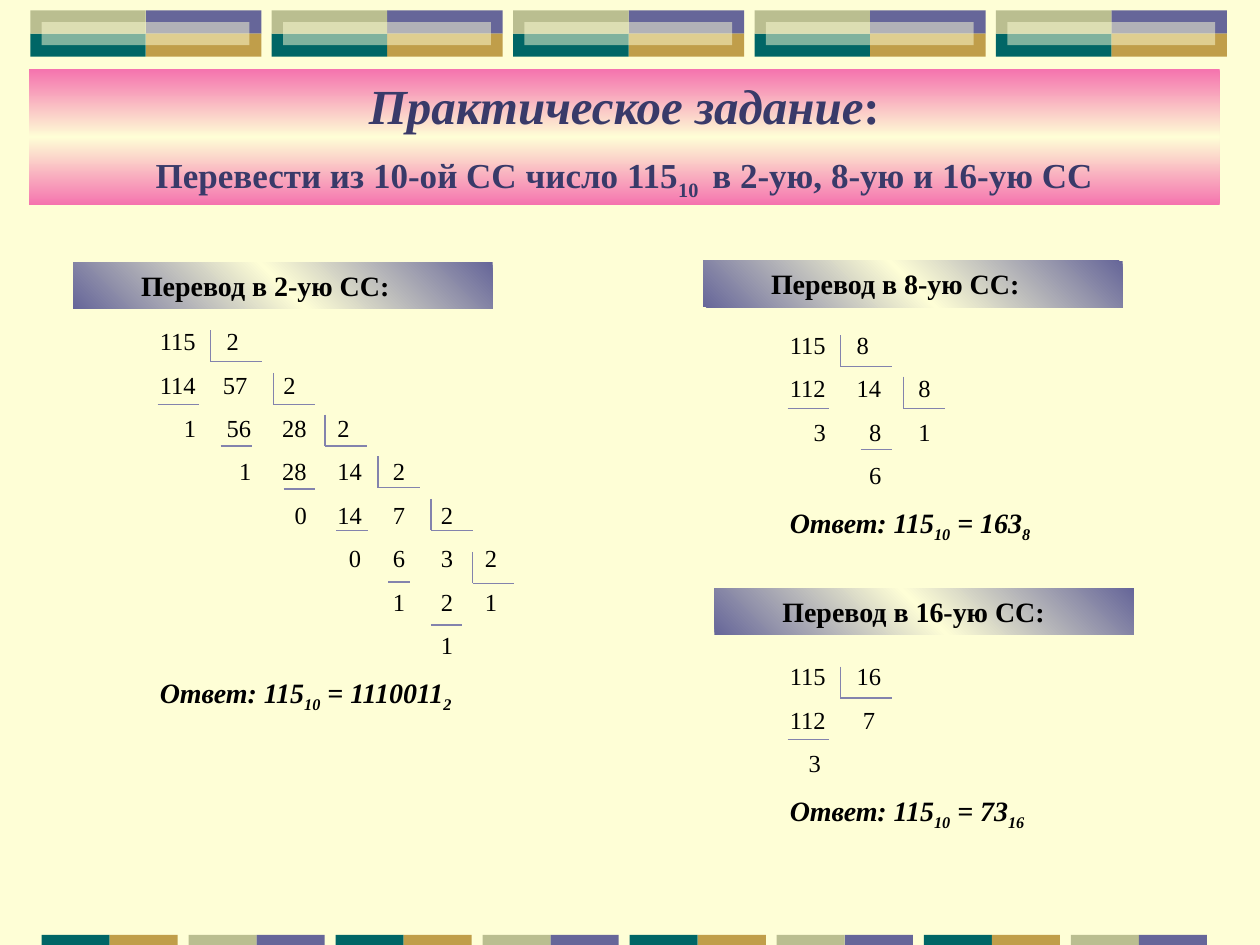
import pptx
import pptx.dml.color
import pptx.enum.shapes
import pptx.enum.text
import pptx.oxml.ns
import pptx.util
from lxml import etree

Inches, Pt = pptx.util.Inches, pptx.util.Pt
RGBColor = pptx.dml.color.RGBColor
ALIGN = pptx.enum.text.PP_ALIGN
ANCHOR = pptx.enum.text.MSO_ANCHOR
qn = pptx.oxml.ns.qn

CREAM = RGBColor(0xFE, 0xFE, 0xD6)
VIOLET = RGBColor(0x66, 0x66, 0x99)
GOLD = RGBColor(0xC0, 0x9E, 0x4A)
TEAL = RGBColor(0x00, 0x66, 0x66)
OLIVE = RGBColor(0xBA, 0xBE, 0x90)
PINK = RGBColor(0xF5, 0x73, 0xAE)
NAVY = RGBColor(0x39, 0x3A, 0x69)
LILAC = RGBColor(0x83, 0x83, 0xAD)
BLACK = RGBColor(0, 0, 0)
FONT = "Times New Roman"

# Content: text between underscores is a subscript
TITLE = "Практическое задание"
TASK = "Перевести из 10-ой СС число 115_10 _ в 2-ую, 8-ую и 16-ую СС"

# Rows hold (x, number); corners and bars hold (x, y, width);
# all are measured from the working area, whose place is "work"
CONVERSIONS = [
    dict(heading="Перевод в 2-ую СС:", heading_at=(0.58, 2.08),
         work=(1.17, 2.54, 4.42, 3.22),
         rows=[[(0, "115"), (0.53, "2")],
               [(0, "114"), (0.5, "57"), (0.98, "2")],
               [(0.19, "1"), (0.53, "56"), (0.97, "28"), (1.41, "2")],
               [(0.63, "1"), (0.97, "28"), (1.41, "14"), (1.85, "2")],
               [(1.07, "0"), (1.41, "14"), (1.85, "7"), (2.23, "2")],
               [(1.5, "0"), (1.85, "6"), (2.23, "3"), (2.58, "2")],
               [(1.85, "1"), (2.23, "2"), (2.58, "1")],
               [(2.23, "1")]],
         corners=[(0.5, 0.08, 0.41), (1, 0.42, 0.33), (1.41, 0.75, 0.33),
                  (1.83, 1.08, 0.33), (2.25, 1.42, 0.33), (2.58, 1.84, 0.33)],
         bars=[(0.08, 0.67, 0.33), (0.58, 1, 0.25), (1.08, 1.34, 0.25),
               (1.5, 1.67, 0.25), (1.91, 2.08, 0.17), (2.25, 2.42, 0.25)],
         answer="Ответ: 115_10_ = 1110011_2"),
    dict(heading="Перевод в 16-ую СС:", heading_at=(5.67, 4.67),
         work=(6.17, 5.2, 2.33, 1.45),
         rows=[[(0, "115"), (0.53, "16")],
               [(0, "112"), (0.58, "7")],
               [(0.15, "3")]],
         corners=[(0.5, 0.09, 0.41)],
         bars=[(0.08, 0.67, 0.33)],
         answer="Ответ: 115_10_ = 73_16"),
    dict(heading="Перевод в 8-ую СС:", heading_at=(5.58, 2.07),
         work=(6.17, 2.57, 2.33, 1.8),
         rows=[[(0, "115"), (0.53, "8")],
               [(0, "112"), (0.53, "14"), (1.02, "8")],
               [(0.19, "3"), (0.63, "8"), (1.02, "1")],
               [(0.63, "6")]],
         corners=[(0.5, 0.09, 0.41), (1, 0.42, 0.33)],
         bars=[(0.08, 0.67, 0.33), (0.66, 1, 0.25)],
         answer="Ответ: 115_10_ = 163_8"),
]


def add_block(left, top, width, height, color, alpha=None):
    block = slide.shapes.add_shape(pptx.enum.shapes.MSO_SHAPE.RECTANGLE, Inches(left),
                                   Inches(top), Inches(width), Inches(height))
    block.shadow.inherit = False
    block.line.fill.background()
    block.fill.solid()
    block.fill.fore_color.rgb = color
    if alpha:
        tint = block._element.spPr.find(".//" + qn("a:srgbClr"))
        etree.SubElement(tint, qn("a:alpha")).set("val", str(alpha * 1000))
    return block


def add_banner(left, top, width, height, edge, angle):
    """Rectangle fading from the edge colour to cream and back."""
    banner = add_block(left, top, width, height, edge)
    banner.fill.gradient()
    banner.fill.gradient_angle = angle
    stops = banner._element.spPr.find(".//" + qn("a:gsLst"))
    for old_stop in list(stops):
        stops.remove(old_stop)
    for position, color in ((0, edge), (50, CREAM), (100, edge)):
        stop = etree.SubElement(stops, qn("a:gs"), pos=str(position * 1000))
        etree.SubElement(stop, qn("a:srgbClr"), val=str(color))
    banner.text_frame.word_wrap = True
    return banner


def add_line(x1, y1, x2, y2):
    line = slide.shapes.add_connector(pptx.enum.shapes.MSO_CONNECTOR.STRAIGHT,
                                      Inches(x1), Inches(y1), Inches(x2), Inches(y2))
    line.line.color.rgb = LILAC
    line.line.width = Pt(0.75)
    etree.SubElement(line._element.spPr, qn("a:effectLst"))


def write(frame, text, size, color=BLACK, bold=False, italic=False,
          align=ALIGN.LEFT, before=0, tabs=(), paragraph=None):
    """Add a paragraph to the frame, or continue the given one."""
    if paragraph is None:
        paragraph = frame.paragraphs[0]
        if paragraph.runs:
            paragraph = frame.add_paragraph()
        paragraph.alignment = align
        paragraph.space_before = Pt(before)
        if tabs:
            tab_list = etree.SubElement(paragraph._p.get_or_add_pPr(), qn("a:tabLst"))
            for x in tabs:
                etree.SubElement(tab_list, qn("a:tab"), pos=str(Inches(x)), algn="l")
    for index, part in enumerate(text.split("_")):
        run = paragraph.add_run()
        run.text = part
        run.font.name, run.font.size = FONT, Pt(size)
        run.font.bold, run.font.italic = bold, italic
        run.font.color.rgb = color
        if index % 2:
            run._r.get_or_add_rPr().set("baseline", "-25000")
    return paragraph


def add_conversion(conversion):
    left, top, width, height = conversion["work"]

    # Long division, one paragraph a row
    work = slide.shapes.add_textbox(Inches(left), Inches(top), Inches(width), Inches(height))
    frame = work.text_frame
    frame.word_wrap = True
    for number, row in enumerate(conversion["rows"]):
        text = "".join(("\t" if x else "") + digits for x, digits in row)
        write(frame, text, 14, before=8 if number else 0, tabs=[x for x, _ in row if x])
    write(frame, conversion["answer"], 16, bold=True, italic=True, before=9)

    # Division corners and subtraction bars
    for x, y, length in conversion["corners"]:
        x, y, foot = left + x, top + y, top + y + 0.25
        add_line(x, y, x, foot)
        add_line(x, foot, x + length, foot)
    for x, y, length in conversion["bars"]:
        add_line(left + x, top + y, left + x + length, top + y)

    # Heading
    heading = add_banner(*conversion["heading_at"], 3.33, 0.37, VIOLET, 45)
    heading.text_frame.margin_left = Inches(0.54)
    heading.text_frame.vertical_anchor = ANCHOR.TOP
    write(heading.text_frame, conversion["heading"], 16, bold=True)


deck = pptx.Presentation()
deck.slide_width, deck.slide_height = Inches(10), Inches(7.5)
slide = deck.slides.add_slide(deck.slide_layouts[6])
slide.background.fill.solid()
slide.background.fill.fore_color.rgb = CREAM

# Top ornament: five four-colour tiles with a pale strip
for tile in range(5):
    x = 0.24 + tile * 1.916
    for column, row, color in ((1, 0, VIOLET), (1, 1, GOLD), (0, 1, TEAL), (0, 0, OLIVE)):
        add_block(x + column * 0.917, 0.083 + row * 0.184, 0.917, 0.184, color)
    add_block(x + 0.09, 0.175, 1.65, 0.184, CREAM, alpha=50)

# Bottom ornament: eight two-colour tiles
for tile in range(8):
    for column, color in enumerate(((TEAL, GOLD), (OLIVE, VIOLET))[tile % 2]):
        add_block(0.33 + tile * 1.167 + column * 0.54, 7.42, 0.54, 0.08, color)

# Title
title = add_banner(0.23, 0.55, 9.45, 1.08, PINK, 270).text_frame
title.vertical_anchor = ANCHOR.TOP
title_line = write(title, TITLE, 28, NAVY, bold=True, italic=True, align=ALIGN.CENTER)
write(title, ":", 28, NAVY, bold=True, paragraph=title_line)
write(title, TASK, 20, NAVY, bold=True, align=ALIGN.CENTER, before=11)

for conversion in CONVERSIONS:
    add_conversion(conversion)

deck.save("out.pptx")
